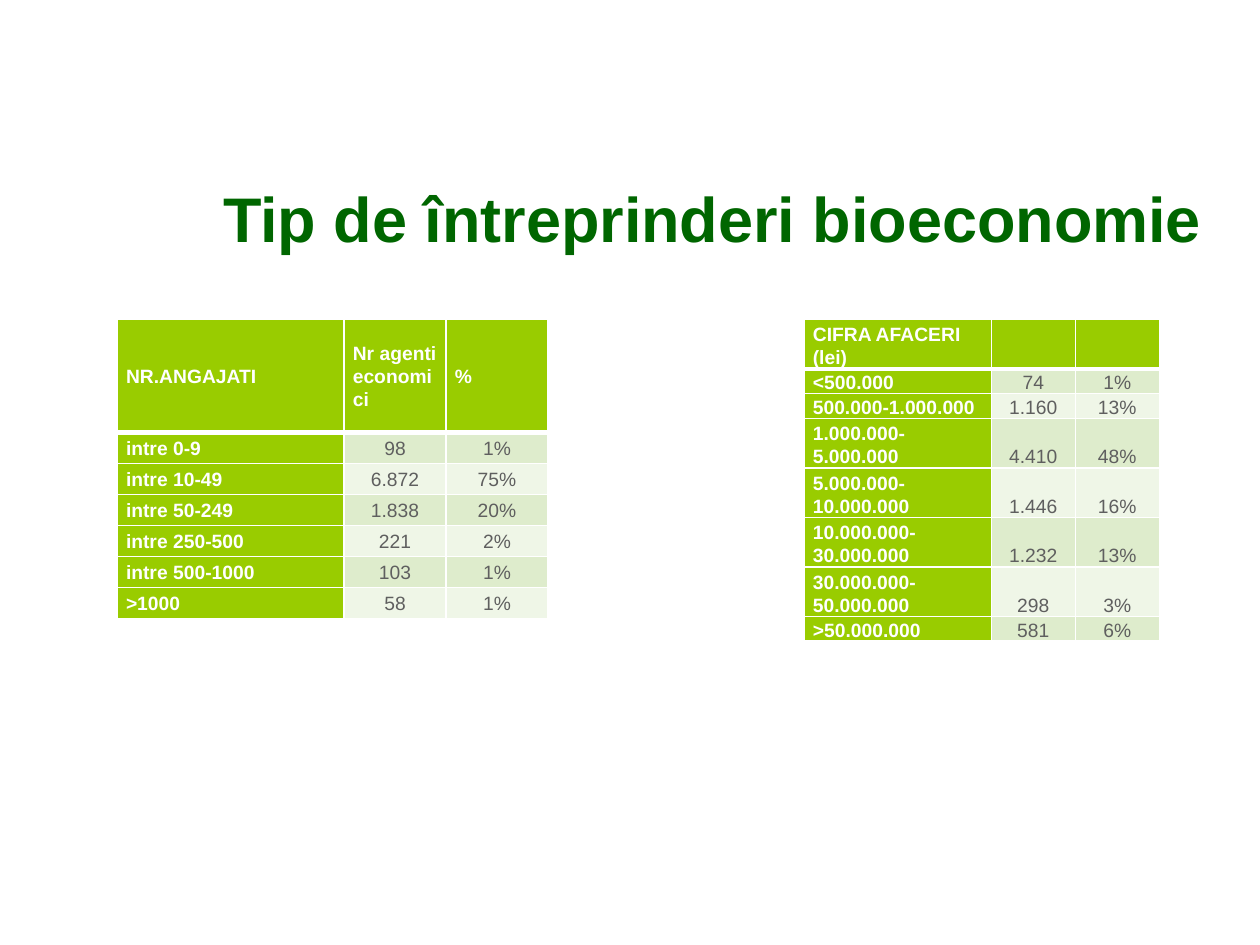
from pptx import Presentation
from pptx.dml.color import RGBColor
from pptx.enum.text import MSO_ANCHOR, PP_ALIGN
from pptx.oxml import parse_xml
from pptx.oxml.ns import nsdecls
from pptx.util import Pt

GREEN, DARK, GREY, WHITE = "99CC00", "006600", "5F5F5F", "FFFFFF"
BANDS = ["EFF6E7", "DEECCC"]

STAFF = [
    ("NR.ANGAJATI", "Nr agenti economici", "%"),
    ("intre 0-9", "98", "1%"),
    ("intre 10-49", "6.872", "75%"),
    ("intre 50-249", "1.838", "20%"),
    ("intre 250-500", "221", "2%"),
    ("intre 500-1000", "103", "1%"),
    (">1000", "58", "1%"),
]
SALES = [
    ("CIFRA AFACERI (lei)", "", ""),
    ("<500.000", "74", "1%"),
    ("500.000-1.000.000", "1.160", "13%"),
    ("1.000.000-5.000.000", "4.410", "48%"),
    ("5.000.000-10.000.000", "1.446", "16%"),
    ("10.000.000-30.000.000", "1.232", "13%"),
    ("30.000.000-50.000.000", "298", "3%"),
    (">50.000.000", "581", "6%"),
]


def color(code):
    return RGBColor.from_string(code)


def style(para, size, code, bold):
    font = para.font
    font.name, font.size, font.bold = "Arial", Pt(size), bold
    font.color.rgb = color(code)


def edge(cell, low):
    props = cell._tc.get_or_add_tcPr()
    sides = [("L", 1), ("R", 1), ("T", 1), ("B", low)]
    for spot, (side, width) in enumerate(sides):
        props.insert(spot, parse_xml(
            f'<a:ln{side} {nsdecls("a")} w="{Pt(width)}"><a:solidFill>'
            f'<a:srgbClr val="{WHITE}"/></a:solidFill></a:ln{side}>'))


def add_title(slide, text, left, top, width, height):
    frame = slide.shapes.add_textbox(
        Pt(left), Pt(top), Pt(width), Pt(height)).text_frame
    frame.word_wrap = True
    frame.vertical_anchor = MSO_ANCHOR.MIDDLE
    para = frame.paragraphs[0]
    para.text = text
    para.alignment = PP_ALIGN.RIGHT
    style(para, 36, DARK, True)


def fill_cell(cell, text, row, col, anchor):
    head = row == 0
    label = head or col == 0
    cell.fill.solid()
    cell.fill.fore_color.rgb = color(GREEN if label else BANDS[row % 2])
    cell.margin_left = cell.margin_right = Pt(5)
    cell.margin_top = cell.margin_bottom = 0
    cell.vertical_anchor = anchor
    para = cell.text_frame.paragraphs[0]
    para.text = text
    para.line_spacing = 1.07
    para.alignment = PP_ALIGN.LEFT if label else PP_ALIGN.CENTER
    style(para, 11, WHITE if label else GREY, label)
    edge(cell, 3 if head or row == 1 and False else 1)


def add_grid(slide, data, left, top, cols, rows, anchor):
    grid = slide.shapes.add_table(
        len(rows), len(cols), Pt(left), Pt(top),
        Pt(sum(cols)), Pt(sum(rows))).table
    for col, width in zip(grid.columns, cols):
        col.width = Pt(width)
    for row, height in zip(grid.rows, rows):
        row.height = Pt(height)
    for r, line in enumerate(data):
        for c, text in enumerate(line):
            fill_cell(grid.cell(r, c), text, r, c, anchor)


def main():
    deck = Presentation()
    deck.slide_width, deck.slide_height = Pt(720), Pt(540)
    slide = deck.slides.add_slide(deck.slide_layouts[6])
    add_title(slide, "Tip de întreprinderi bioeconomie", 33, 80, 661, 88)
    add_grid(slide, STAFF, 67, 182.5, [129.6, 58.3, 58.3],
             [64.8] + [17.7] * 6, MSO_ANCHOR.MIDDLE)
    one, two = 14.2, 27.5
    add_grid(slide, SALES, 459.5, 182.5, [107, 48, 48],
             [two, one, one] + [two] * 4 + [one], MSO_ANCHOR.BOTTOM)
    deck.save("out.pptx")


if __name__ == "__main__":
    main()
